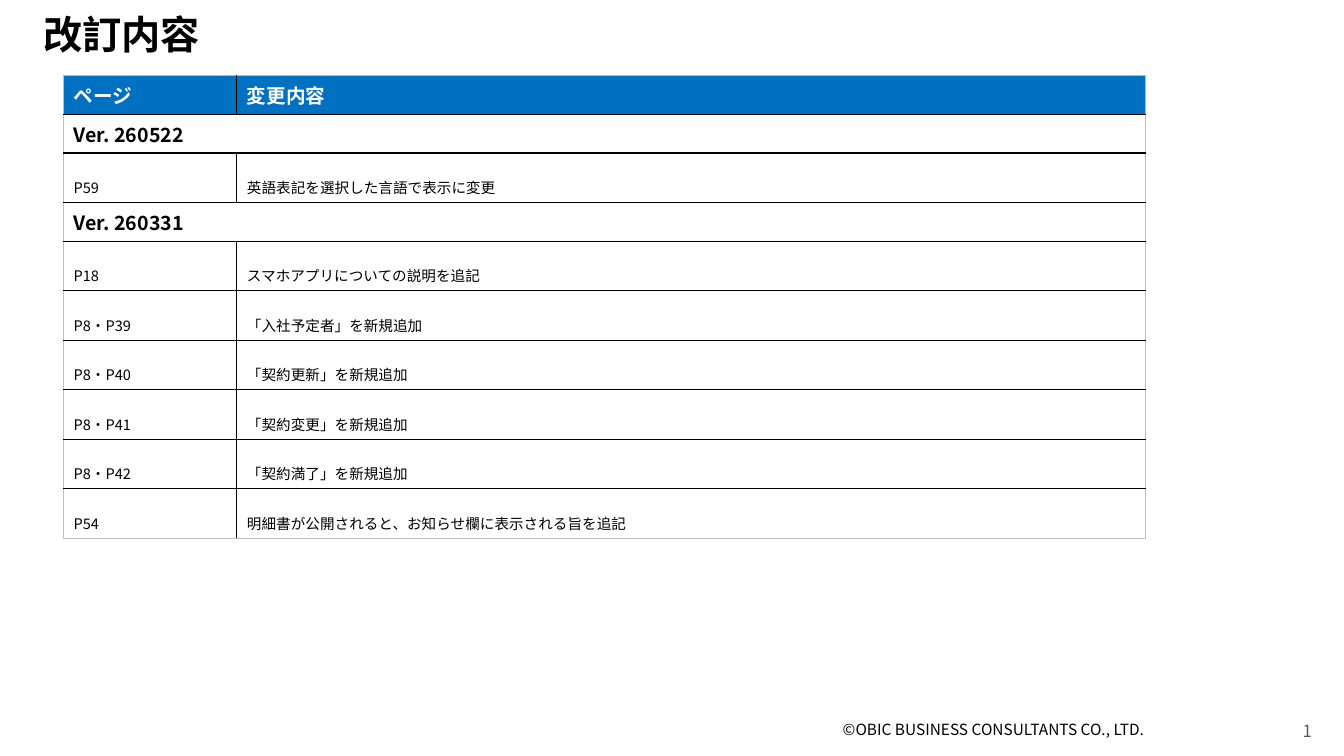
from lxml.etree import SubElement
from pptx import Presentation
from pptx.dml.color import RGBColor
from pptx.enum.text import MSO_ANCHOR as Anchor, PP_ALIGN as Align
from pptx.oxml.ns import qn
from pptx.util import Inches, Pt

FONT = "Noto Sans CJK JP"
BLACK, WHITE, BLUE, GRAY, EDGE = "000000", "FFFFFF", "0070C0", "595959", "BFBFBF"
HEADINGS = ("ページ", "変更内容")
REVISIONS = {
    "Ver. 260522": [("P59", "英語表記を選択した言語で表示に変更")],
    "Ver. 260331": [
        ("P18", "スマホアプリについての説明を追記"),
        ("P8・P39", "「入社予定者」を新規追加"),
        ("P8・P40", "「契約更新」を新規追加"),
        ("P8・P41", "「契約変更」を新規追加"),
        ("P8・P42", "「契約満了」を新規追加"),
        ("P54", "明細書が公開されると、お知らせ欄に表示される旨を追記"),
    ],
}


def color(value):
    return RGBColor.from_string(value)


def write(text_frame, text, size, text_color=BLACK, bold=False, baseline=0):
    text_frame.text = text
    paragraph = text_frame.paragraphs[0]
    run = paragraph.runs[0]
    run.font.size = Pt(size)
    run.font.bold = bold
    run.font.color.rgb = color(text_color)
    run.font.name = FONT
    properties = run._r.get_or_add_rPr()
    SubElement(properties, qn("a:ea"), typeface=FONT)
    if baseline:
        properties.set("baseline", str(baseline * 1000))
    return paragraph


def add_text(slide, box, text, size, **style):
    shape = slide.shapes.add_textbox(*map(Inches, box))
    shape.text_frame.word_wrap = True
    return write(shape.text_frame, text, size, **style)


def add_title(slide, box):
    paragraph = add_text(slide, box, "改訂内容", 28, bold=True)
    paragraph.line_spacing = 0.9


def add_footer(slide, left, top):
    add_text(slide, (left, top, 4.5, 0.4), "©OBIC BUSINESS CONSULTANTS CO., LTD.", 11)
    number = add_text(slide, (left + 1.85, top, 3, 0.4), "1", 12, text_color=GRAY)
    number.alignment = Align.RIGHT


def set_borders(cell, outer_sides):
    properties = cell._tc.get_or_add_tcPr()
    for side in "LRTB":
        outer = side in outer_sides
        line = SubElement(properties, qn(f"a:ln{side}"), w=str(Pt(0.5 if outer else 1)))
        fill = SubElement(line, qn("a:solidFill"))
        SubElement(fill, qn("a:srgbClr"), val=EDGE if outer else BLACK)


def add_revision_table(slide, box):
    rows = [("heading", HEADINGS)]
    for version, changes in REVISIONS.items():
        rows.append(("version", (version,)))
        rows += [("change", change) for change in changes]

    styles = {
        "heading": dict(size=14, text_color=WHITE, bold=True),
        "version": dict(size=14, bold=True),
        "change": dict(size=18, baseline=-25),
    }
    table = slide.shapes.add_table(len(rows), 2, *map(Inches, box)).table
    table.first_row = table.horz_banding = False
    page_width = 1.72
    table.columns[0].width = Inches(page_width)
    table.columns[1].width = Inches(box[2] - page_width)

    for row_index, (kind, texts) in enumerate(rows):
        table.rows[row_index].height = Inches(0.3 if kind == "heading" else 0.35)
        cells = [table.cell(row_index, column) for column in range(2)]
        if kind == "version":
            cells[0].merge(cells[1])
        for column, cell in enumerate(cells):
            outer_sides = "LR" if kind == "version" else "LR"[column]
            if row_index == 0:
                outer_sides += "T"
            if row_index == len(rows) - 1:
                outer_sides += "B"
            set_borders(cell, outer_sides)
            cell.fill.solid()
            cell.fill.fore_color.rgb = color(BLUE if kind == "heading" else WHITE)
            cell.vertical_anchor = Anchor.MIDDLE
            cell.margin_bottom = Inches(0.1)
        for cell, text in zip(cells, texts):
            write(cell.text_frame, text, **styles[kind])


def main():
    presentation = Presentation()
    presentation.slide_width = Inches(13.33)
    presentation.slide_height = Inches(7.5)
    slide = presentation.slides.add_slide(presentation.slide_layouts[6])
    add_footer(slide, 8.26, 7.1)
    add_title(slide, (0.33, 0.11, 12.55, 0.65))
    add_revision_table(slide, (0.63, 0.75, 10.73, 3.45))
    presentation.save("out.pptx")


if __name__ == "__main__":
    main()
